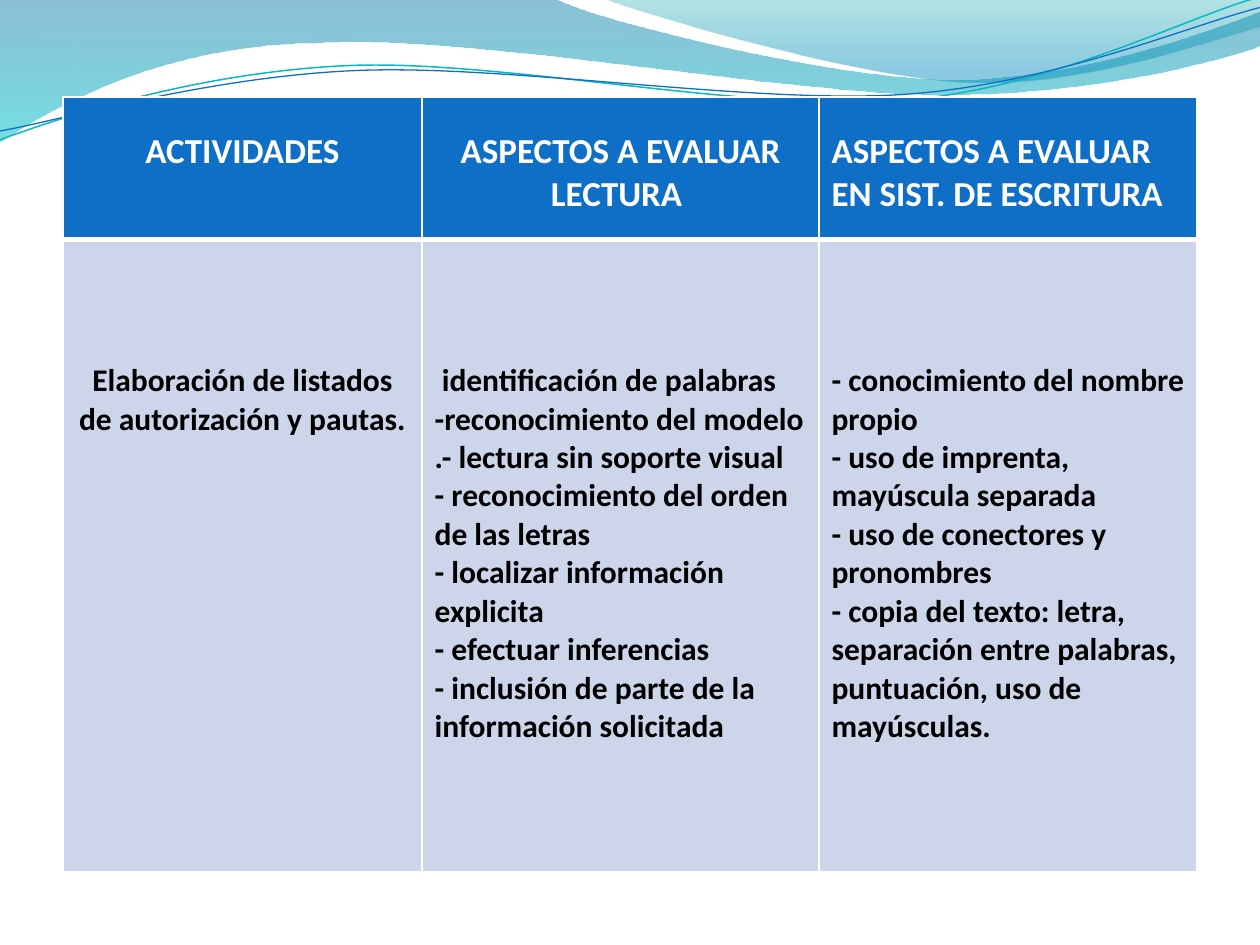
from math import cos, radians, sin

from lxml import etree
from pptx import Presentation
from pptx.dml.color import RGBColor
from pptx.enum.text import PP_ALIGN
from pptx.oxml.ns import qn
from pptx.util import Inches, Pt

LEFT, CENTER = PP_ALIGN.LEFT, PP_ALIGN.CENTER
BLUE, TEAL, PALE, WHITE, BLACK = "0F6FC6", "0AB8BF", "CCD5EA", "FFFFFF", "000000"
TILT = -2.7


def color(value):
    return RGBColor.from_string(value)


def write(tf, lines, size=18, fill=BLACK, align=LEFT):
    for i, line in enumerate(lines):
        p = tf.paragraphs[0] if i == 0 else tf.add_paragraph()
        p.alignment = align
        r = p.add_run()
        r.text = line
        r.font.name = "Calibri"
        r.font.size = Pt(size)
        r.font.bold = True
        r.font.color.rgb = color(fill)


def untilt(part, center):
    cx, cy = center
    a = radians(-TILT)
    turned = []
    for x, y in zip(part[::2], part[1::2]):
        dx, dy = x - cx, y - cy
        turned += [cx + dx * cos(a) - dy * sin(a), cy + dx * sin(a) + dy * cos(a)]
    return turned


class Deck:
    def __init__(self):
        self.prs = Presentation()
        self.prs.slide_width = Inches(10)
        self.prs.slide_height = Inches(7.5)
        self.s = self.prs.slides.add_slide(self.prs.slide_layouts[6])

    def outline(self, parts, close):
        points = [(Inches(x), Inches(y)) for part in parts
                  for x, y in zip(part[::2], part[1::2])]
        builder = self.s.shapes.build_freeform(*points[0])
        builder.add_line_segments(points[1:], close=close)
        sp = builder.convert_to_shape()
        sp.shadow.inherit = False
        segments = iter(list(sp._element.spPr.iter(qn("a:lnTo"))))
        for part in parts[1:]:
            segment = next(segments)
            if len(part) == 6:
                bezier = etree.Element(qn("a:cubicBezTo"))
                segment.addprevious(bezier)
                for step in (segment, next(segments), next(segments)):
                    bezier.append(step[0])
                    step.getparent().remove(step)
        return sp

    def wave(self, parts, stops):
        sp = self.outline(parts, True)
        sp.line.fill.background()
        sp.fill.gradient()
        sp.fill.gradient_angle = 270
        for stop, (position, value, alpha) in zip(sp.fill.gradient_stops, stops):
            stop.position = position
            stop.color.rgb = color(value)
        for clr, (position, value, alpha) in zip(sp._element.spPr.iter(qn("a:srgbClr")), stops):
            etree.SubElement(clr, qn("a:alpha"), val=str(alpha * 1000))

    def curve(self, parts, center, value, width):
        sp = self.outline([untilt(part, center) for part in parts], False)
        sp.rotation = TILT
        sp.fill.background()
        sp.line.color.rgb = color(value)
        sp.line.width = Pt(width)

    def borders(self, cell, **widths):
        tcPr = cell._tc.get_or_add_tcPr()
        for side in "LRTB":
            ln = etree.SubElement(tcPr, qn(f"a:ln{side}"), w=str(Pt(widths.get(side, 1))))
            fill = etree.SubElement(ln, qn("a:solidFill"))
            etree.SubElement(fill, qn("a:srgbClr"), val=WHITE)

    def table(self, left, top, widths, heights, rows):
        frame = self.s.shapes.add_table(len(rows), len(widths), Inches(left), Inches(top),
                                        Inches(sum(widths)), Inches(sum(heights)))
        table = frame.table
        table.horz_banding = False
        for column, width in zip(table.columns, widths):
            column.width = Inches(width)
        for i, (row, height) in enumerate(zip(rows, heights)):
            table.rows[i].height = Inches(height)
            header = i == 0
            for j, (lines, align) in enumerate(row):
                cell = table.cell(i, j)
                self.borders(cell, **({"B": 3} if header else {"T": 3}))
                cell.fill.solid()
                cell.fill.fore_color.rgb = color(BLUE if header else PALE)
                cell.margin_top = Inches(0.26 if header else 0.97)
                write(cell.text_frame, lines, size=20 if header else 18,
                      fill=WHITE if header else BLACK, align=align)


def main():
    deck = Deck()
    deck.wave([(0, -0.01), (4.4, -0.01), (4.76, 0.17, 6.64, 0.63, 7.58, 0.63),
               (8.53, 0.63, 9.58, 0.26, 10, 0.09), (10.01, 0.36),
               (9.83, 0.44, 8.7, 0.76, 7.46, 0.75), (6.22, 0.75, 3.82, 0.28, 2.57, 0.34),
               (1.29, 0.35, 0.46, 0.83, -0.01, 1.13), (0, -0.01)],
              [(0, "0074A1", 45), (1, "00C6CF", 55)])
    deck.wave([(4.79, -0.01), (5.09, 0.11, 6.82, 0.62, 7.69, 0.65),
               (8.56, 0.69, 9.61, 0.32, 10, 0.21), (10, 0), (4.79, -0.01)],
              [(0, "00A1A9", 30), (0.8, "008BBF", 45)])
    deck.curve([(0, 1.11), (0.48, 0.93, 1.58, 0.57, 2.77, 0.52),
                (3.95, 0.47, 5.93, 0.89, 7.13, 0.8),
                (8.33, 0.71, 9.38, 0.15, 9.98, -0.02)], (4.99, 0.57), TEAL, 0.85)
    deck.curve([(0, 1.04), (0.47, 0.96, 1.64, 0.61, 2.83, 0.56),
                (4.03, 0.51, 5.97, 0.83, 7.17, 0.75),
                (8.36, 0.67, 9.41, 0.21, 10, 0.06)], (5, 0.59), BLUE, 0.75)

    header = [(["ACTIVIDADES"], CENTER),
              (["ASPECTOS A EVALUAR LECTURA "], CENTER),
              (["ASPECTOS A EVALUAR EN SIST. DE ESCRITURA"], LEFT)]
    reading = [" identificación de palabras",
               "-reconocimiento del modelo",
               ".- lectura sin soporte visual",
               "- reconocimiento del orden de las letras",
               "- localizar información explicita",
               "- efectuar inferencias",
               "- inclusión de parte de la información solicitada"]
    writing = ["- conocimiento del nombre propio",
               "- uso de imprenta, mayúscula separada",
               "- uso de conectores y pronombres",
               "- copia del texto: letra, separación entre palabras, puntuación, uso de mayúsculas."]
    body = [(["Elaboración de listados de autorización y pautas. "], CENTER),
            (reading, LEFT), (writing, LEFT)]
    deck.table(0.5, 0.77, [2.85, 3.15, 3], [1.13, 5.02], [header, body])
    deck.prs.save("out.pptx")


if __name__ == "__main__":
    main()
